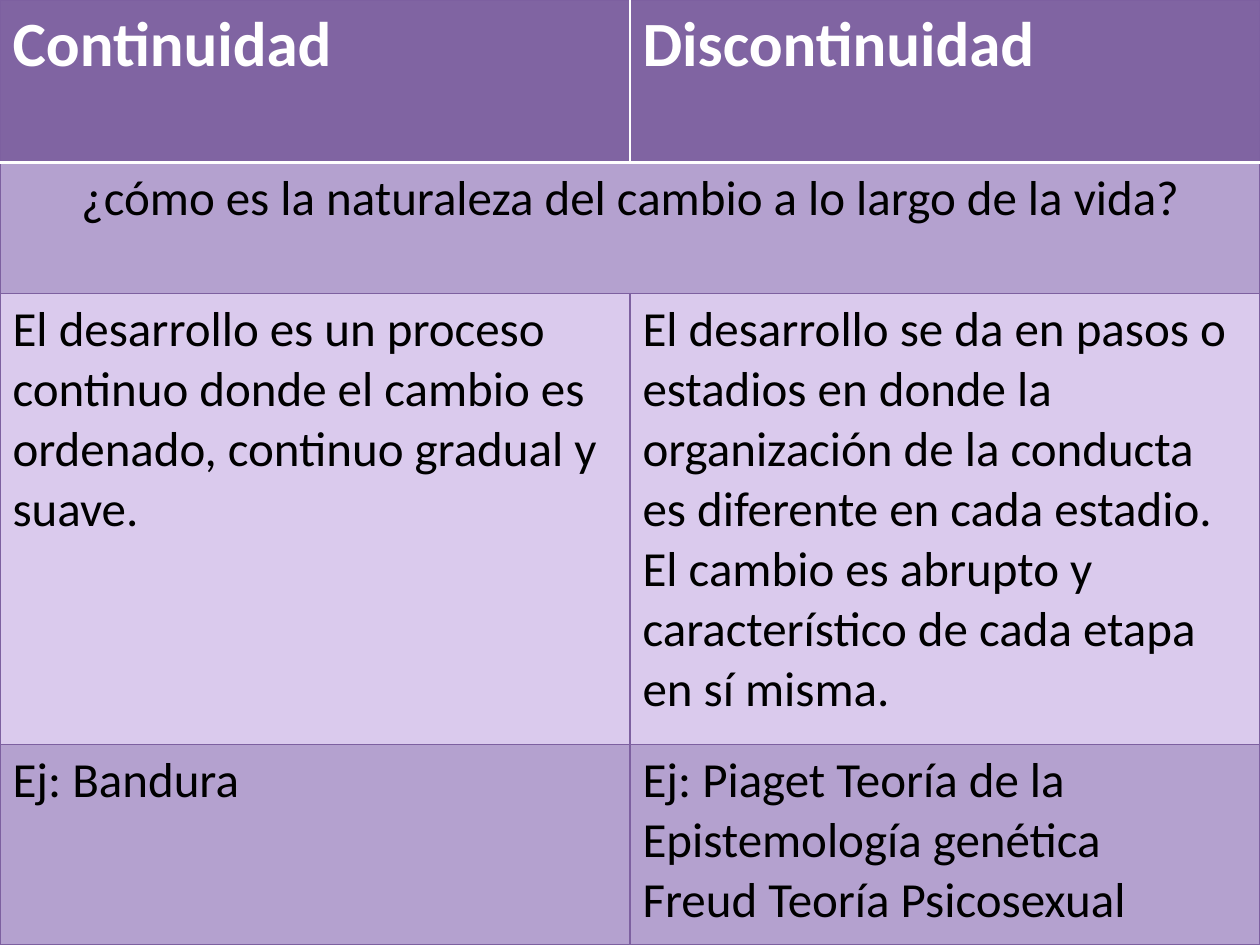
from lxml import etree
from pptx import Presentation
from pptx.dml.color import RGBColor
from pptx.enum.text import PP_ALIGN
from pptx.oxml.ns import qn
from pptx.util import Emu, Pt

PX = 914400 // 126
BLANK_LAYOUT = 6
LEFT, CENTER = PP_ALIGN.LEFT, PP_ALIGN.CENTER
COLORS = {
    "header": "8064A2",
    "dark_band": "B4A1CF",
    "light_band": "DACAED",
    "border": "7D60A0",
    "white": "FFFFFF",
    "black": "000000",
}
HEADER_FONT = {"name": "Calibri", "size": Pt(36), "bold": True}
BODY_FONT = {"name": "Calibri", "size": Pt(28), "bold": False}
THIN = ("border", 0.75)
HEADER_RULE = ("white", 2)

COLUMN_WIDTHS = [630, 630]
# Height, fill and cell texts of each row; a single text spans the row
ROWS = [
    (163, "header", ["Continuidad", "Discontinuidad"]),
    (131, "dark_band", ["¿cómo es la naturaleza del cambio a lo largo de la vida?"]),
    (451, "light_band", [
        "El desarrollo es un proceso continuo donde el cambio es ordenado, "
        "continuo gradual y suave.",
        "El desarrollo se da en pasos o estadios en donde la organización de "
        "la conducta es diferente en cada estadio. El cambio es abrupto y "
        "característico de cada etapa en sí misma.",
    ]),
    (200, "dark_band", [
        "Ej: Bandura",
        "Ej: Piaget Teoría de la Epistemología genética\nFreud Teoría Psicosexual",
    ]),
]


def px(length):
    return Emu(length * PX)


def rgb(name):
    return RGBColor.from_string(COLORS[name])


def set_borders(cell, borders):
    """Draw the given sides; the schema wants them in L, R, T, B order, first."""
    properties = cell._tc.get_or_add_tcPr()
    sides = [side for side in "LRTB" if side in borders]
    for index, side in enumerate(sides):
        color, width = borders[side]
        line = etree.Element(qn(f"a:ln{side}"), w=str(Pt(width)))
        fill = etree.SubElement(line, qn("a:solidFill"))
        etree.SubElement(fill, qn("a:srgbClr"), val=COLORS[color])
        properties.insert(index, line)


def write_cell(cell, text, font_format, color, alignment):
    cell.text = text
    for paragraph in cell.text_frame.paragraphs:
        paragraph.alignment = alignment
        for run in paragraph.runs:
            for name, value in font_format.items():
                setattr(run.font, name, value)
            run.font.color.rgb = rgb(color)


def cell_borders(row_index, column_index):
    if row_index == 0:
        outer_side = "L" if column_index == 0 else "R"
        return {outer_side: THIN, "T": THIN, "B": HEADER_RULE}
    top = HEADER_RULE if row_index == 1 else THIN
    return {"L": THIN, "R": THIN, "T": top, "B": THIN}


def fill_row(table, row_index, height, fill, texts):
    table.rows[row_index].height = px(height)
    is_header = row_index == 0
    spans_row = len(texts) == 1
    for column_index in range(len(COLUMN_WIDTHS)):
        cell = table.cell(row_index, column_index)
        cell.fill.solid()
        cell.fill.fore_color.rgb = rgb(fill)
        set_borders(cell, cell_borders(row_index, column_index))
    if spans_row:
        table.cell(row_index, 0).merge(table.cell(row_index, len(COLUMN_WIDTHS) - 1))
    for column_index, text in enumerate(texts):
        write_cell(
            table.cell(row_index, column_index),
            text,
            HEADER_FONT if is_header else BODY_FONT,
            "white" if is_header else "black",
            CENTER if spans_row else LEFT,
        )


def add_comparison_table(slide):
    width, height = sum(COLUMN_WIDTHS), sum(row[0] for row in ROWS)
    shape = slide.shapes.add_table(
        len(ROWS), len(COLUMN_WIDTHS), 0, 0, px(width), px(height)
    )
    table = shape.table
    for column, column_width in zip(table.columns, COLUMN_WIDTHS):
        column.width = px(column_width)
    for row_index, row in enumerate(ROWS):
        fill_row(table, row_index, *row)


def main():
    presentation = Presentation()
    presentation.slide_width, presentation.slide_height = px(1260), px(945)
    slide = presentation.slides.add_slide(presentation.slide_layouts[BLANK_LAYOUT])

    # Continuity against discontinuity, over the whole slide
    add_comparison_table(slide)

    presentation.save("out.pptx")


if __name__ == "__main__":
    main()
